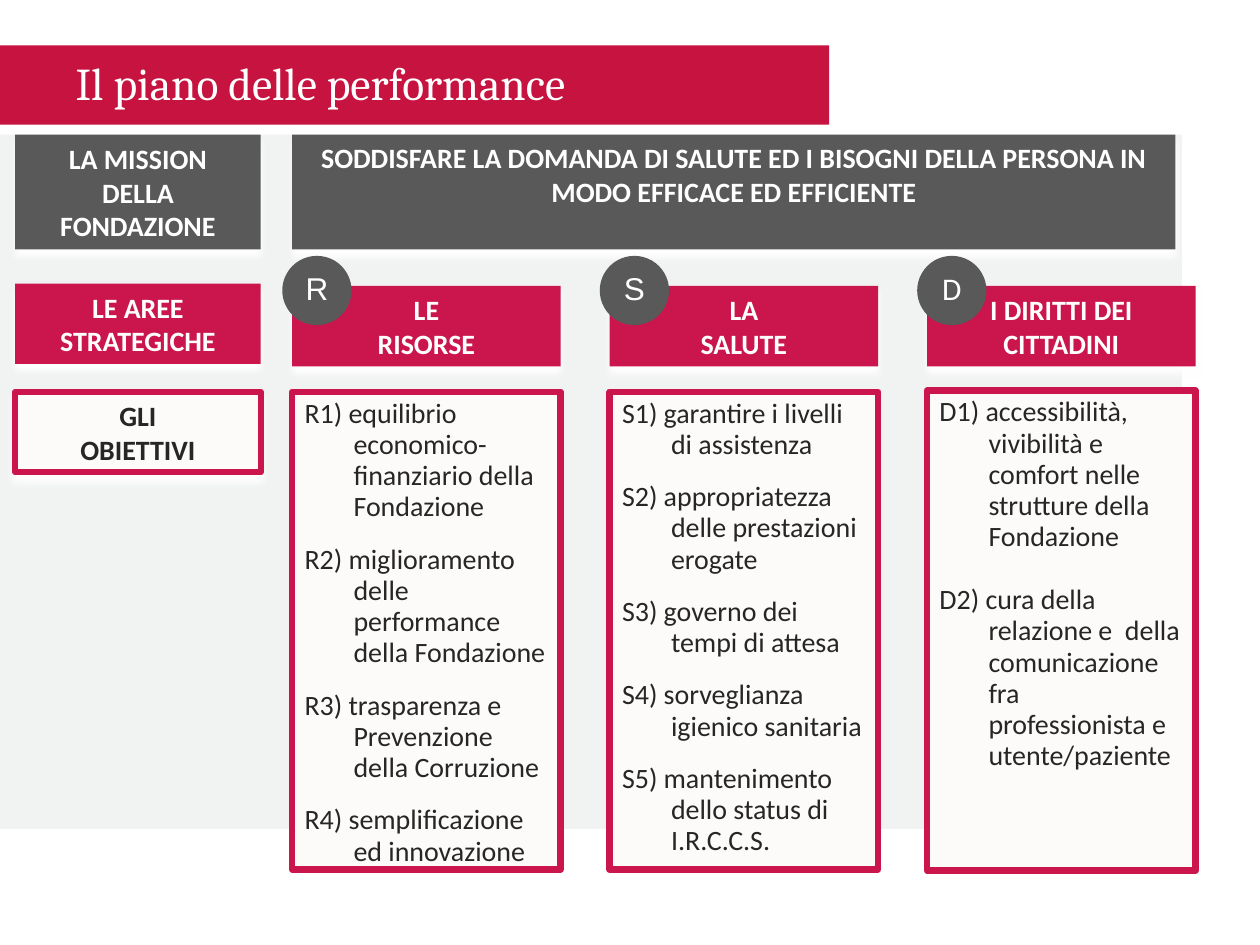
"""Build the performance plan slide: mission, strategic areas and objectives."""
from lxml.etree import SubElement
from pptx import Presentation
from pptx.dml.color import RGBColor
from pptx.enum.shapes import MSO_SHAPE
from pptx.enum.text import MSO_ANCHOR, PP_ALIGN
from pptx.oxml.ns import qn
from pptx.util import Pt

WHITE = RGBColor(0xFF, 0xFF, 0xFF)
PALE = RGBColor(0xF1, 0xF2, 0xF2)
CREAM = RGBColor(0xFC, 0xFB, 0xF9)
GREY = RGBColor(0x59, 0x59, 0x59)
INK = RGBColor(0x26, 0x26, 0x26)
RED = RGBColor(0xC6, 0x13, 0x3F)
CRIMSON = RGBColor(0xCA, 0x16, 0x4C)

LABEL_LEFT, LABEL_WIDTH = 8.6, 140.4
COLUMN_LEFT, COLUMN_WIDTH, COLUMN_STEP = 167, 153.4, 181.4
MISSION_TOP, MISSION_HEIGHT = 77, 65.5
AREA_HEIGHT = 46

AREAS = [
    ("R", "Arial", "LE\nRISORSE", 223.9, 272.9, 12, [
        "R1) equilibrio economico-finanziario della Fondazione",
        "R2) miglioramento delle performance della Fondazione",
        "R3) trasparenza e Prevenzione della Corruzione",
        "R4) semplificazione ed innovazione",
    ]),
    ("S", "Arial", "LA\nSALUTE", 223.9, 272.9, 12, [
        "S1) garantire i livelli di assistenza",
        "S2) appropriatezza delle prestazioni erogate",
        "S3) governo dei tempi di attesa",
        "S4) sorveglianza igienico sanitaria",
        "S5) mantenimento dello status di I.R.C.C.S.",
    ]),
    ("D", "Calibri", "I DIRITTI DEI CITTADINI", 223.2, 274.3, 18, [
        "D1) accessibilità, vivibilità e comfort nelle strutture della Fondazione",
        "D2) cura della relazione e  della comunicazione  fra professionista e  utente/paziente",
    ]),
]


def add_box(left, top, width, height, fill, text="", color=WHITE, size=16, bold=False,
            font="Calibri", outline=0, kind=MSO_SHAPE.RECTANGLE):
    box = page.shapes.add_shape(kind, Pt(left), Pt(top), Pt(width), Pt(height))
    box.shadow.inherit = False
    box.fill.solid()
    box.fill.fore_color.rgb = fill
    if outline:
        box.line.color.rgb = CRIMSON
        box.line.width = Pt(outline)
    else:
        box.line.fill.background()
    if text:
        box.text_frame.text = text
    for para in box.text_frame.paragraphs:
        para.alignment = PP_ALIGN.CENTER
        for span in para.runs:
            span.font.name = font
            span.font.size = Pt(size)
            span.font.bold = bold
            span.font.color.rgb = color
    return box


def add_heading(left, top, width, height, fill, text, color=WHITE, outline=0):
    box = add_box(left, top, width, height, fill, text, color, bold=True, outline=outline)
    effects = box._element.spPr.find(qn("a:effectLst"))
    shadow = SubElement(effects, qn("a:outerShdw"), blurRad=str(Pt(4)), dist=str(Pt(4)),
                        dir="5400000", rotWithShape="0")
    SubElement(shadow, qn("a:srgbClr"), val=str(WHITE))
    return box


deck = Presentation()
deck.slide_width, deck.slide_height = Pt(720), Pt(540)
page = deck.slides.add_slide(deck.slide_layouts[5])

add_box(0, 77, 675.4, 396.7, PALE)
add_box(-3.6, 25.9, 477.4, 45.4, RED)

title = page.shapes.title
page.shapes._spTree.append(title._element)
title.left, title.top, title.width, title.height = Pt(36.7), Pt(25.9), Pt(370), Pt(31)
title.text_frame.text = "Il piano delle performance"
title.text_frame.vertical_anchor = MSO_ANCHOR.TOP
title.text_frame.margin_left = title.text_frame.margin_right = Pt(6.5)
title.text_frame.margin_top, title.text_frame.margin_bottom = Pt(5.8), Pt(2.9)
title_para = title.text_frame.paragraphs[0]
title_para.alignment = PP_ALIGN.JUSTIFY
title_font = title_para.runs[0].font
title_font.name, title_font.size = "Cambria", Pt(26)
title_font.color.rgb = WHITE

for top, height, fill, text, color, outline in [
    (MISSION_TOP, MISSION_HEIGHT, GREY, "LA MISSION\nDELLA FONDAZIONE", WHITE, 0),
    (162, AREA_HEIGHT, CRIMSON, "LE AREE STRATEGICHE", WHITE, 0),
    (223.9, AREA_HEIGHT, CREAM, "GLI\nOBIETTIVI", INK, 3.25),
]:
    add_heading(LABEL_LEFT, top, LABEL_WIDTH, height, fill, text, color, outline)

mission = add_heading(
    COLUMN_LEFT, MISSION_TOP, 504.7, MISSION_HEIGHT, GREY,
    "SODDISFARE LA DOMANDA DI SALUTE ED I BISOGNI DELLA PERSONA IN MODO EFFICACE ED EFFICIENTE")
mission.text_frame.vertical_anchor = MSO_ANCHOR.TOP

for column, (letter, font, name, top, height, gap, goals) in enumerate(AREAS):
    left = COLUMN_LEFT + column * COLUMN_STEP
    add_heading(left, 163.4, COLUMN_WIDTH, AREA_HEIGHT, CRIMSON, name)

    goal_box = add_box(left, top, COLUMN_WIDTH, height, CREAM, "\n".join(goals), INK, outline=3.75)
    goal_box.text_frame.vertical_anchor = MSO_ANCHOR.TOP
    for para in goal_box.text_frame.paragraphs:
        para.alignment = PP_ALIGN.LEFT
        para.line_spacing = 0.93
        para.space_after = Pt(gap)
        properties = para._p.get_or_add_pPr()
        properties.set("marL", str(Pt(28)))
        properties.set("indent", str(Pt(-28)))

    badge = add_box(left - 5.7, 146.2, 39.6, 39.6, GREY, letter, size=18, font=font,
                    kind=MSO_SHAPE.OVAL)
    badge.text_frame.vertical_anchor = MSO_ANCHOR.TOP
    badge.text_frame.paragraphs[0].line_spacing = 0.93

deck.save("out.pptx")
